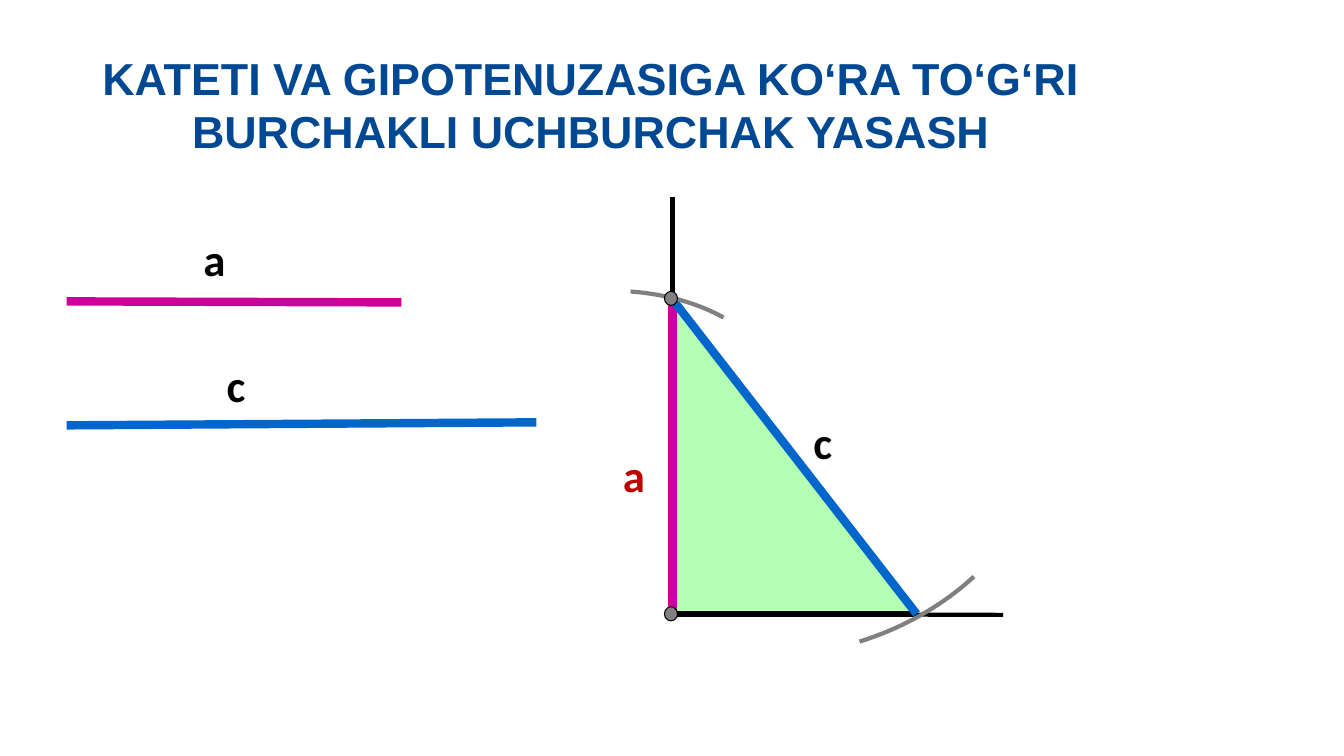
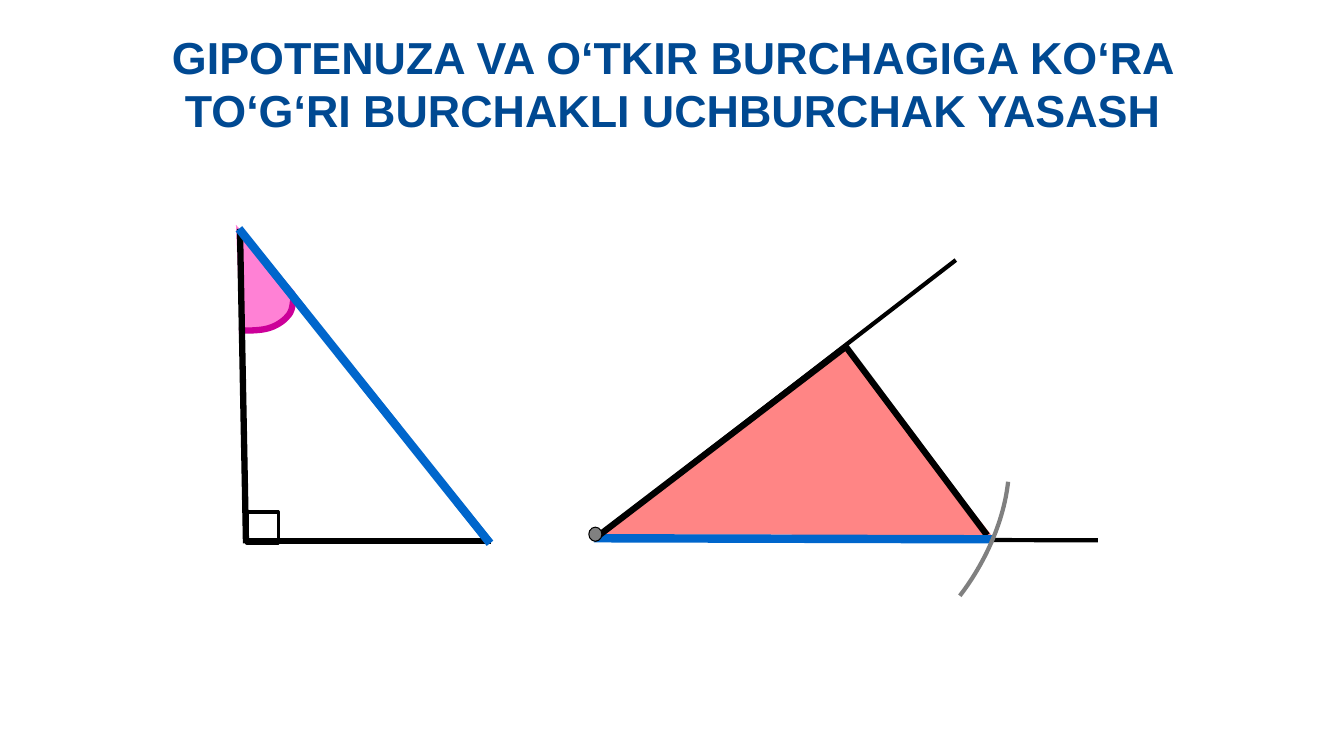
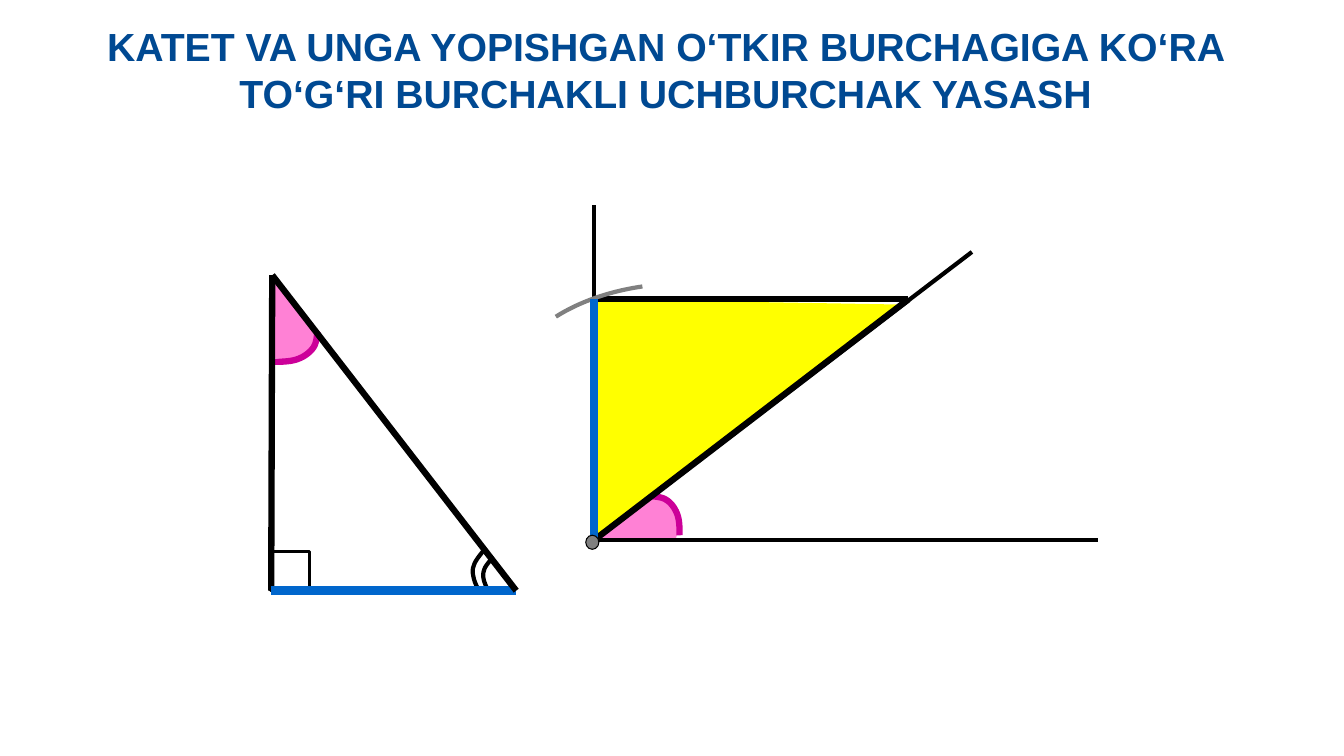
from lxml import etree
from pptx import Presentation
from pptx import util as u
from pptx.dml.color import RGBColor
from pptx.enum import shapes, text
from pptx.oxml.ns import qn

BLACK = RGBColor(0x00, 0x00, 0x00)
NAVY = RGBColor(0x00, 0x49, 0x92)
BLUE = RGBColor(0x00, 0x66, 0xCC)
MAGENTA = RGBColor(0xCC, 0x00, 0x99)
PINK = RGBColor(0xFF, 0x81, 0xD5)
RED = RGBColor(0xC0, 0x00, 0x00)
GREY = RGBColor(0x80, 0x80, 0x80)
GREEN = RGBColor(0xB3, 0xFF, 0xB3)
CORAL = RGBColor(0xFF, 0x85, 0x85)
YELLOW = RGBColor(0xFF, 0xFF, 0x00)

RAY, SIDE, GIVEN = 3, 4.5, 6
DOT_SIZE = (0.13, 0.14)
COMPASS_SIZE = (2.97, 1.72)
CURVE_STEPS = 12


def inches(values):
    return [u.Inches(value) for value in values]


def write(frame, words, size=32, font="Calibri", color=BLACK, align=None, wrap=False):
    frame.word_wrap = wrap
    frame.auto_size = text.MSO_AUTO_SIZE.SHAPE_TO_FIT_TEXT
    frame.vertical_anchor = text.MSO_ANCHOR.TOP
    paragraph = frame.paragraphs[0]
    paragraph.alignment = align
    run = paragraph.add_run()
    run.text = words
    run.font.size = u.Pt(size)
    run.font.name = font
    run.font.bold = True
    run.font.color.rgb = color


def titled_slide(deck, words, box, size=32):
    slide = deck.slides.add_slide(deck.slide_layouts[5])
    title = slide.shapes.title
    title.left, title.top, title.width, title.height = inches(box)
    write(title.text_frame, words, size=size, font="Arial", color=NAVY,
          align=text.PP_ALIGN.CENTER, wrap=True)
    return slide


def label(slide, words, left, top, color=BLACK):
    box = slide.shapes.add_textbox(*inches((left, top, 0.4, 0.64)))
    write(box.text_frame, words, color=color)


def segment(slide, start, end, color=BLACK, width=SIDE):
    line = slide.shapes.add_connector(
        shapes.MSO_CONNECTOR.STRAIGHT, *inches((*start, *end)))
    line.line.color.rgb = color
    line.line.width = u.Pt(width)
    etree.SubElement(line._element.spPr, qn("a:effectLst"))


def paint(shape, fill=None, line=None, width=1):
    shape.shadow.inherit = False
    if fill is None:
        shape.fill.background()
    else:
        shape.fill.solid()
        shape.fill.fore_color.rgb = fill
    if line is None:
        shape.line.fill.background()
    else:
        shape.line.color.rgb = line
        shape.line.width = u.Pt(width)


def figure(slide, kind, box, rotation=0, flip=None, **colors):
    shape = slide.shapes.add_shape(kind, *inches(box))
    shape.rotation = rotation
    if flip:
        shape._element.spPr.xfrm.set(flip, "1")
    paint(shape, **colors)
    return shape


def triangle(slide, box, fill, **turn):
    figure(slide, shapes.MSO_SHAPE.RIGHT_TRIANGLE, box, fill=fill, **turn)


def right_angle(slide, left, top, size):
    figure(slide, shapes.MSO_SHAPE.RECTANGLE, (left, top, size, size),
           line=BLACK, width=2.25)


def dot(slide, left, top):
    figure(slide, shapes.MSO_SHAPE.OVAL, (left, top, *DOT_SIZE),
           fill=GREY, line=BLACK, width=0.75)


def compass_arc(slide, left, top, angles, size=COMPASS_SIZE, **turn):
    arc = figure(slide, shapes.MSO_SHAPE.ARC, (left, top, *size),
                 line=GREY, width=RAY, **turn)
    arc.adjustments[0], arc.adjustments[1] = angles


def outline(slide, points, close=False, **colors):
    corners = [inches(point) for point in points]
    builder = slide.shapes.build_freeform(*corners[0])
    builder.add_line_segments(corners[1:], close=close)
    paint(builder.convert_to_shape(), **colors)


def bezier(a, b, c, d, t):
    s = 1 - t
    return [s ** 3 * p + 3 * s * s * t * q + 3 * s * t * t * r + t ** 3 * e
            for p, q, r, e in zip(a, b, c, d)]


def curve(slide, controls, color, width):
    points = [controls[0]]
    for i in range(0, len(controls) - 1, 3):
        points += [bezier(*controls[i:i + 4], step / CURVE_STEPS)
                   for step in range(1, CURVE_STEPS + 1)]
    outline(slide, points, line=color, width=width)


def angle_mark(slide, sector, controls):
    outline(slide, sector, close=True, fill=PINK)
    curve(slide, controls, MAGENTA, SIDE)


def leg_and_hypotenuse(deck):
    slide = titled_slide(
        deck, "KATETI VA GIPOTENUZASIGA KO‘RA TO‘G‘RI BURCHAKLI UCHBURCHAK YASASH",
        (0.6, 0.45, 10.52, 1.18))
    corner, top, foot = (6.67, 6.09), (6.67, 2.97), (9.09, 6.09)
    triangle(slide, (6.67, 3.05, 2.42, 3.05), GREEN)
    segment(slide, (0.66, 2.99), (3.98, 3), MAGENTA, GIVEN)
    segment(slide, (5.32, 4.19), (0.66, 4.22), BLUE, GIVEN)
    segment(slide, corner, (6.67, 1.95), width=RAY)
    segment(slide, corner, (9.95, 6.1), width=RAY)
    segment(slide, top, corner, MAGENTA, GIVEN)
    segment(slide, corner, foot)
    segment(slide, foot, top, BLUE, GIVEN)
    compass_arc(slide, 4.71, 2.89, (162, 194.75), rotation=4)
    compass_arc(slide, 5.57, 2.79, (162.3, 185.9), size=(4.81, 3.66),
                rotation=343, flip="flipV")
    for dot_top in (6.02, 2.89):
        dot(slide, 6.59, dot_top)
    label(slide, "a", 1.92, 2.25)
    label(slide, "c", 2.15, 3.5)
    label(slide, "a", 6.08, 4.39, RED)
    label(slide, "c", 7.97, 4.07)


def hypotenuse_and_angle(deck):
    slide = titled_slide(
        deck, "GIPOTENUZA VA O‘TKIR BURCHAGIGA KO‘RA TO‘G‘RI BURCHAKLI UCHBURCHAK YASASH",
        (0.81, 0.24, 11.73, 1.18))
    right_angle(slide, 2.45, 5.08, 0.31)
    triangle(slide, (6.7, 3.78, 2.39, 3.05), CORAL, rotation=232, flip="flipH")
    angle_mark(
        slide,
        [(2.34, 2.23), (2.93, 2.9), (2.89, 3.07), (2.8, 3.19), (2.66, 3.28),
         (2.55, 3.27), (2.38, 3.25)],
        [(2.37, 3.28), (2.47, 3.28), (2.57, 3.28), (2.65, 3.26), (2.73, 3.24),
         (2.81, 3.19), (2.85, 3.14), (2.9, 3.09), (2.9, 3.03), (2.91, 2.97)])
    vertex, apex = (5.89, 5.35), (8.39, 3.44)
    segment(slide, apex, (9.79, 5.31))
    segment(slide, (2.38, 2.27), (2.44, 5.39))
    segment(slide, (2.45, 5.37), (4.87, 5.37))
    segment(slide, (4.86, 5.39), (2.37, 2.27), BLUE, GIVEN)
    segment(slide, (10.89, 5.36), vertex, width=RAY)
    segment(slide, vertex, (9.48, 2.58), width=RAY)
    segment(slide, (9.84, 5.35), (5.89, 5.34), BLUE, GIVEN)
    segment(slide, vertex, apex)
    dot(slide, 5.84, 5.23)
    compass_arc(slide, 7.46, 4.37, (150.7, 194.48), rotation=301, flip="flipV")


def leg_and_adjacent_angle(deck):
    slide = titled_slide(
        deck, "KATET VA UNGA YOPISHGAN O‘TKIR BURCHAGIGA KO‘RA TO‘G‘RI BURCHAKLI UCHBURCHAK YASASH",
        (0.93, 0.17, 11.34, 1.04), size=28)
    triangle(slide, (6.2, 2.68, 2.42, 3.05), YELLOW, rotation=91)
    right_angle(slide, 2.68, 5.47, 0.39)
    angle_mark(
        slide,
        [(5.9, 5.35), (6.46, 4.94), (6.58, 4.97), (6.67, 5.04), (6.74, 5.16),
         (6.73, 5.24), (6.7, 5.36)],
        [(6.74, 5.31), (6.74, 5.24), (6.74, 5.17), (6.72, 5.11), (6.7, 5.05),
         (6.66, 4.99), (6.61, 4.96), (6.57, 4.93), (6.51, 4.93), (6.45, 4.92)])
    angle_mark(
        slide,
        [(2.72, 2.75), (3.13, 3.3), (3.1, 3.43), (3.03, 3.52), (2.92, 3.59),
         (2.84, 3.57), (2.71, 3.55)],
        [(2.69, 3.59), (2.77, 3.59), (2.86, 3.59), (2.93, 3.57), (3, 3.55),
         (3.06, 3.51), (3.1, 3.46), (3.14, 3.41), (3.14, 3.35), (3.15, 3.29)])
    inner_mark = [(4.87, 5.55), (4.84, 5.59), (4.81, 5.62), (4.8, 5.66),
                  (4.79, 5.69), (4.79, 5.72), (4.8, 5.76),
                  (4.81, 5.79), (4.82, 5.82), (4.84, 5.85)]
    outer_mark = [(4.79, 5.47), (4.75, 5.52), (4.71, 5.57), (4.7, 5.61),
                  (4.68, 5.66), (4.69, 5.69), (4.7, 5.74),
                  (4.71, 5.78), (4.73, 5.82), (4.75, 5.86)]
    for mark in (inner_mark, outer_mark):
        curve(slide, mark, BLACK, RAY)
    vertex, leg_end, apex = (5.89, 5.36), (5.89, 2.97), (9.01, 2.97)
    for ray_end in ((5.89, 2.03), (9.64, 2.5), (10.89, 5.36)):
        segment(slide, vertex, ray_end, width=RAY)
    top, corner, foot = (2.7, 2.73), (2.69, 5.86), (5.12, 5.86)
    segment(slide, top, corner)
    segment(slide, corner, foot, BLUE, GIVEN)
    segment(slide, foot, top)
    segment(slide, leg_end, apex)
    segment(slide, apex, vertex)
    compass_arc(slide, 5.04, 2.83, (163.97, 194.75), rotation=173, flip="flipV")
    segment(slide, leg_end, vertex, BLUE, GIVEN)
    dot(slide, 5.81, 5.31)


def main():
    deck = Presentation()
    deck.slide_width, deck.slide_height = inches((13.33, 7.5))
    leg_and_hypotenuse(deck)
    hypotenuse_and_angle(deck)
    leg_and_adjacent_angle(deck)
    deck.save("out.pptx")


if __name__ == "__main__":
    main()
